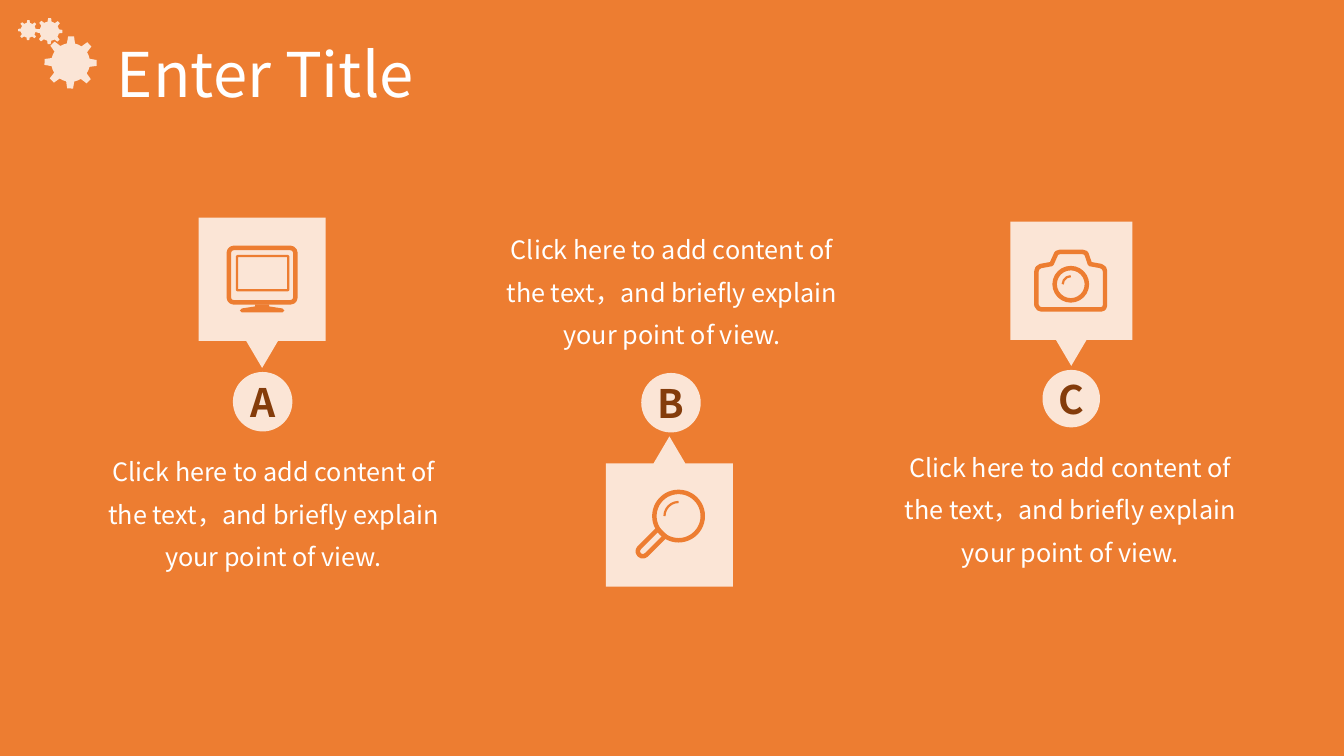
from dataclasses import dataclass
from math import cos, radians, sin
from typing import NamedTuple

from pptx import Presentation
from pptx.dml.color import RGBColor
from pptx.enum.shapes import MSO_SHAPE as Preset
from pptx.enum.text import MSO_ANCHOR as Anchor, MSO_AUTO_SIZE as AutoSize, PP_ALIGN as Align
from pptx.oxml.ns import qn
from pptx.shapes.autoshape import Shape
from pptx.slide import Slide
from pptx.text.text import TextFrame
from pptx.util import Inches, Pt


@dataclass(frozen=True)
class Theme:
    orange: RGBColor = RGBColor.from_string("ED7D31")
    cream: RGBColor = RGBColor.from_string("FBE5D6")
    brown: RGBColor = RGBColor.from_string("843C0B")
    white: RGBColor = RGBColor.from_string("FFFFFF")
    font: str = "Noto Sans CJK JP"
    title_size: float = 44
    letter_size: float = 28
    body_size: float = 18
    thick: float = 3.2
    thin: float = 1.6


THEME = Theme()


class Box(NamedTuple):
    left: float
    top: float
    width: float
    height: float


class Gear(NamedTuple):
    x: float
    y: float
    radius: float


@dataclass(frozen=True)
class Step:
    letter: str
    badge: Box
    callout: Box
    caption: Box
    points_up: bool = False


@dataclass(frozen=True)
class Stroke:
    preset: Preset
    box: Box
    weight: float
    adjustments: tuple[float, ...] = ()
    rotation: float = 0


@dataclass(frozen=True)
class Outline:
    points: tuple[tuple[float, float], ...]
    weight: float = 0


CAPTION = "Click here to add content of the text，and briefly explain your point of view."
CALLOUT = (0.359, 0.125, 0.212, 0.82)
GLARE = (108.0, 162.0)

GEARS = (Gear(0.49, 0.31, 0.13), Gear(0.28, 0.3, 0.1), Gear(0.7, 0.62, 0.26))

STEPS = (
    Step("A", Box(2.31, 3.69, 0.59, 0.59), Box(1.97, 2.16, 1.26, 1.49), Box(0.88, 4.36, 3.67, 1.41)),
    Step("B", Box(6.36, 3.7, 0.59, 0.59), Box(6.01, 4.33, 1.26, 1.49), Box(4.83, 2.16, 3.67, 1.41), True),
    Step("C", Box(10.34, 3.67, 0.57, 0.57), Box(10.02, 2.2, 1.21, 1.43), Box(8.78, 4.32, 3.67, 1.41)),
)

MONITOR = (
    Stroke(Preset.ROUNDED_RECTANGLE, Box(2.27, 2.46, 0.66, 0.54), THEME.thick, (0.09,)),
    Stroke(Preset.ROUNDED_RECTANGLE, Box(2.35, 2.54, 0.51, 0.34), THEME.thin, (0.03,)),
    Outline(((2.53, 3.02), (2.67, 3.02), (2.67, 3.04), (2.8, 3.06), (2.82, 3.08), (2.8, 3.1),
             (2.4, 3.1), (2.38, 3.08), (2.4, 3.06), (2.53, 3.04))),
)
MAGNIFIER = (
    Stroke(Preset.OVAL, Box(6.49, 4.88, 0.48, 0.48), THEME.thick),
    Stroke(Preset.ROUND_2_SAME_RECTANGLE, Box(6.4, 5.24, 0.1, 0.31), THEME.thick, (0.5, 0), 225),
    Stroke(Preset.ARC, Box(6.59, 4.98, 0.28, 0.28), THEME.thin, GLARE),
)
CAMERA = (
    Stroke(Preset.OVAL, Box(10.46, 2.66, 0.32, 0.32), THEME.thick),
    Stroke(Preset.ARC, Box(10.54, 2.74, 0.16, 0.16), THEME.thin, GLARE),
    Outline(((10.28, 2.69), (10.29, 2.66), (10.32, 2.64), (10.43, 2.62), (10.47, 2.53), (10.48, 2.51),
             (10.51, 2.5), (10.74, 2.5), (10.77, 2.51), (10.78, 2.53), (10.81, 2.62), (10.92, 2.64),
             (10.95, 2.66), (10.96, 2.69), (10.96, 3.03), (10.95, 3.06), (10.92, 3.07),
             (10.33, 3.07), (10.3, 3.06), (10.28, 3.03)), THEME.thick),
)


def write(frame: TextFrame, text: str, *, size: float, color: RGBColor, bold: bool = False,
          align: Align = Align.CENTER, anchor: Anchor = Anchor.TOP, spacing: float = 1.0,
          insets: tuple[float, float] = (0.1, 0.05)) -> None:
    frame.word_wrap = True
    frame.auto_size = AutoSize.NONE
    frame.vertical_anchor = anchor
    frame.margin_left = frame.margin_right = Inches(insets[0])
    frame.margin_top = frame.margin_bottom = Inches(insets[1])
    paragraph = frame.paragraphs[0]
    paragraph.alignment = align
    paragraph.line_spacing = spacing
    run = paragraph.add_run()
    run.text = text
    run.font.name = THEME.font
    run.font.size = Pt(size)
    run.font.bold = bold
    run.font.color.rgb = color
    east_asian = run.font._element.makeelement(qn("a:ea"), {"typeface": THEME.font})
    run.font._element.find(qn("a:latin")).addnext(east_asian)


def paint(shape: Shape, color: RGBColor, weight: float = 0) -> Shape:
    shape.shadow.inherit = False
    if weight:
        shape.fill.background()
        shape.line.color.rgb = color
        shape.line.width = Pt(weight)
    else:
        shape.fill.solid()
        shape.fill.fore_color.rgb = color
        shape.line.fill.background()
    return shape


def add_preset(slide: Slide, preset: Preset, box: Box, color: RGBColor, weight: float = 0,
               adjustments: tuple[float, ...] = ()) -> Shape:
    shape = slide.shapes.add_shape(preset, *map(Inches, box))
    for index, value in enumerate(adjustments):
        shape.adjustments[index] = value
    return paint(shape, color, weight)


def add_outline(slide: Slide, outline: Outline, color: RGBColor) -> Shape:
    start, *rest = [(Inches(x), Inches(y)) for x, y in outline.points]
    builder = slide.shapes.build_freeform(*start)
    builder.add_line_segments(rest, close=True)
    return paint(builder.convert_to_shape(), color, outline.weight)


def add_gear(slide: Slide, gear: Gear) -> None:
    profile = ((-12, 0.74), (-6.5, 1), (6.5, 1), (12, 0.74), (22.5, 0.74))
    points = tuple(
        (gear.x + gear.radius * reach * cos(radians(tooth + offset)),
         gear.y + gear.radius * reach * sin(radians(tooth + offset)))
        for tooth in range(35, 395, 45) for offset, reach in profile
    )
    add_outline(slide, Outline(points), THEME.cream).rotation = 56.1


def add_icon(slide: Slide, icon: tuple[Stroke | Outline, ...]) -> None:
    for part in icon:
        if isinstance(part, Outline):
            add_outline(slide, part, THEME.orange)
        else:
            stroke = add_preset(slide, part.preset, part.box, THEME.orange, part.weight, part.adjustments)
            stroke.rotation = part.rotation


def add_step(slide: Slide, step: Step, icon: tuple[Stroke | Outline, ...]) -> None:
    badge = add_preset(slide, Preset.OVAL, step.badge, THEME.cream)
    write(badge.text_frame, step.letter, size=THEME.letter_size, color=THEME.brown, bold=True,
          anchor=Anchor.MIDDLE, insets=(0, 0))
    callout = add_preset(slide, Preset.DOWN_ARROW_CALLOUT, step.callout, THEME.cream, adjustments=CALLOUT)
    if step.points_up:
        callout._element.spPr.find(qn("a:xfrm")).set("flipV", "1")
    add_icon(slide, icon)
    caption = slide.shapes.add_textbox(*map(Inches, step.caption))
    write(caption.text_frame, CAPTION, size=THEME.body_size, color=THEME.white, spacing=1.4)


def main() -> None:
    deck = Presentation()
    deck.slide_width, deck.slide_height = Inches(13.33), Inches(7.5)
    slide = deck.slides.add_slide(deck.slide_layouts[5])
    slide.background.fill.solid()
    slide.background.fill.fore_color.rgb = THEME.orange
    for gear in GEARS:
        add_gear(slide, gear)
    for step, icon in zip(STEPS, (MONITOR, MAGNIFIER, CAMERA)):
        add_step(slide, step, icon)
    title = slide.shapes.title
    title.left, title.top, title.width, title.height = map(Inches, Box(1.06, 0.18, 11.5, 1.17))
    write(title.text_frame, "Enter Title", size=THEME.title_size, color=THEME.white,
          align=Align.LEFT, anchor=Anchor.MIDDLE, spacing=0.9)
    deck.save("out.pptx")


if __name__ == "__main__":
    main()
